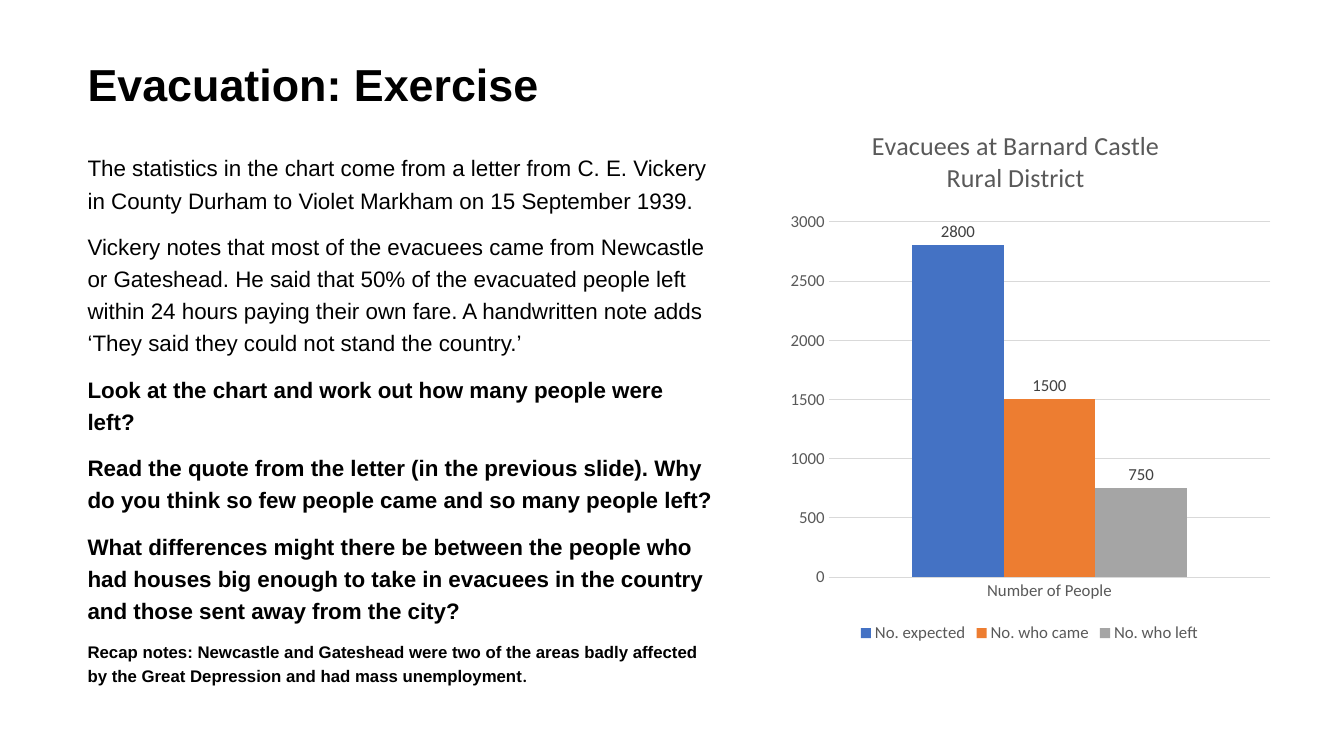
import pptx
import pptx.chart.data
import pptx.dml.color
import pptx.enum.chart
import pptx.enum.text
import pptx.util
from lxml import etree
from pptx.util import Inches, Pt

TITLE = "Evacuation: Exercise"
BODY = [
    ("The statistics in the chart come from a letter from C. E. Vickery in County Durham "
     "to Violet Markham on 15 September 1939.", 16, False),
    ("Vickery notes that most of the evacuees came from Newcastle or Gateshead. He said that "
     "50% of the evacuated people left within 24 hours paying their own fare. A handwritten "
     "note adds ‘They said they could not stand the country.’", 16, False),
    ("Look at the chart and work out how many people were left?", 16, True),
    ("Read the quote from the letter (in the previous slide). Why do you think so few people "
     "came and so many people left?", 16, True),
    ("What differences might there be between the people who had houses big enough to take in "
     "evacuees in the country and those sent away from the city?", 16, True),
    ("Recap notes: Newcastle and Gateshead were two of the areas badly affected by the Great "
     "Depression and had mass unemployment", 12, True),
]
STOP = "."
HEAD = "Evacuees at Barnard Castle\nRural District"
GROUP = "Number of People"
SERIES = [("No. expected", 2800, "blue"), ("No. who came", 1500, "orange"),
          ("No. who left", 750, "gray")]
COLORS = {"black": "000000", "blue": "4472C4", "orange": "ED7D31", "gray": "A5A5A5",
          "text": "595959", "label": "404040", "line": "D9D9D9"}


def color(name):
    """Return the named colour."""
    return pptx.dml.color.RGBColor.from_string(COLORS[name])


def style(font, size, name, face="Calibri", bold=False):
    """Set size, colour, face and weight of a font."""
    font.size, font.name, font.bold = Pt(size), face, bold
    font.color.rgb = color(name)


def add_box(slide, *place):
    """Add a wrapping text box and return its frame."""
    frame = slide.shapes.add_textbox(*map(Inches, place)).text_frame
    frame.word_wrap = True
    return frame


def set_place(part, index, **values):
    """Give a chart part a manual layout."""
    space = "{http://schemas.openxmlformats.org/drawingml/2006/chart}"
    for old in part.findall(space + "layout"):
        part.remove(old)
    layout = etree.Element(space + "layout")
    manual = etree.SubElement(layout, space + "manualLayout")
    for tag, value in values.items():
        etree.SubElement(manual, space + tag).set("val", str(value))
    part.insert(index, layout)


def add_text(slide):
    """Add the heading and the body text."""
    frame = add_box(slide, 0.77, 0.04, 5.05, 1.11)
    frame.vertical_anchor = pptx.enum.text.MSO_ANCHOR.BOTTOM
    frame.text = TITLE
    frame.paragraphs[0].line_spacing = 0.9
    style(frame.paragraphs[0].runs[0].font, 32, "black", "Arial", True)

    frame = add_box(slide, 0.77, 1.43, 6.41, 5.73)
    frame.text = "\n".join(text for text, size, bold in BODY)
    for par, (text, size, bold) in zip(frame.paragraphs, BODY):
        par.line_spacing, par.space_before = 1.2, Pt(10)
        style(par.runs[0].font, size, "black", "Arial", bold)
    end = frame.paragraphs[-1].add_run()
    end.text = STOP
    style(end.font, 12, "black", bold=True)


def add_graph(slide):
    """Add the column chart."""
    kinds = pptx.enum.chart
    data = pptx.chart.data.CategoryChartData()
    data.categories = [GROUP]
    for name, value, tint in SERIES:
        data.add_series(name, [value])
    chart = slide.shapes.add_chart(
        kinds.XL_CHART_TYPE.COLUMN_CLUSTERED,
        *map(Inches, (7.72, 1.08, 4.98, 5.34)), data).chart
    style(chart.font, 10, "black")

    chart.has_title = True
    title = chart.chart_title
    title.text_frame.text = HEAD
    for par in title.text_frame.paragraphs:
        style(par.runs[0].font, 18.6, "text")
    set_place(title._element, 1, xMode="edge", yMode="edge", x=0.18, y=0.03)
    set_place(chart._chartSpace.chart.plotArea, 0, layoutTarget="inner", xMode="edge",
              yMode="edge", x=0.1, y=0.21, w=0.88, h=0.66)

    chart.has_legend = True
    chart.legend.position = kinds.XL_LEGEND_POSITION.BOTTOM
    chart.legend.include_in_layout = False
    style(chart.legend.font, 12, "text")

    for axis in (chart.category_axis, chart.value_axis):
        axis.major_tick_mark = axis.minor_tick_mark = kinds.XL_TICK_MARK.NONE
        style(axis.tick_labels.font, 12, "text")
    scale = chart.value_axis
    scale.minimum_scale, scale.maximum_scale, scale.major_unit = 0, 3000, 500
    scale.format.line.fill.background()
    for line in (chart.category_axis.format.line, scale.major_gridlines.format.line):
        line.color.rgb, line.width = color("line"), Pt(0.75)

    plot = chart.plots[0]
    plot.gap_width, plot.overlap, plot.vary_by_categories = 182, 0, False
    for bar, (name, value, tint) in zip(plot.series, SERIES):
        bar.format.fill.solid()
        bar.format.fill.fore_color.rgb = color(tint)
        labels = bar.data_labels
        labels.show_value = True
        labels.position = kinds.XL_LABEL_POSITION.OUTSIDE_END
        style(labels.font, 12, "label")


def main():
    """Build and save the slide."""
    deck = pptx.Presentation()
    deck.slide_width, deck.slide_height = Inches(13.33), Inches(7.5)
    slide = deck.slides.add_slide(deck.slide_layouts[6])
    add_text(slide)
    add_graph(slide)
    deck.save("out.pptx")


if __name__ == "__main__":
    main()
